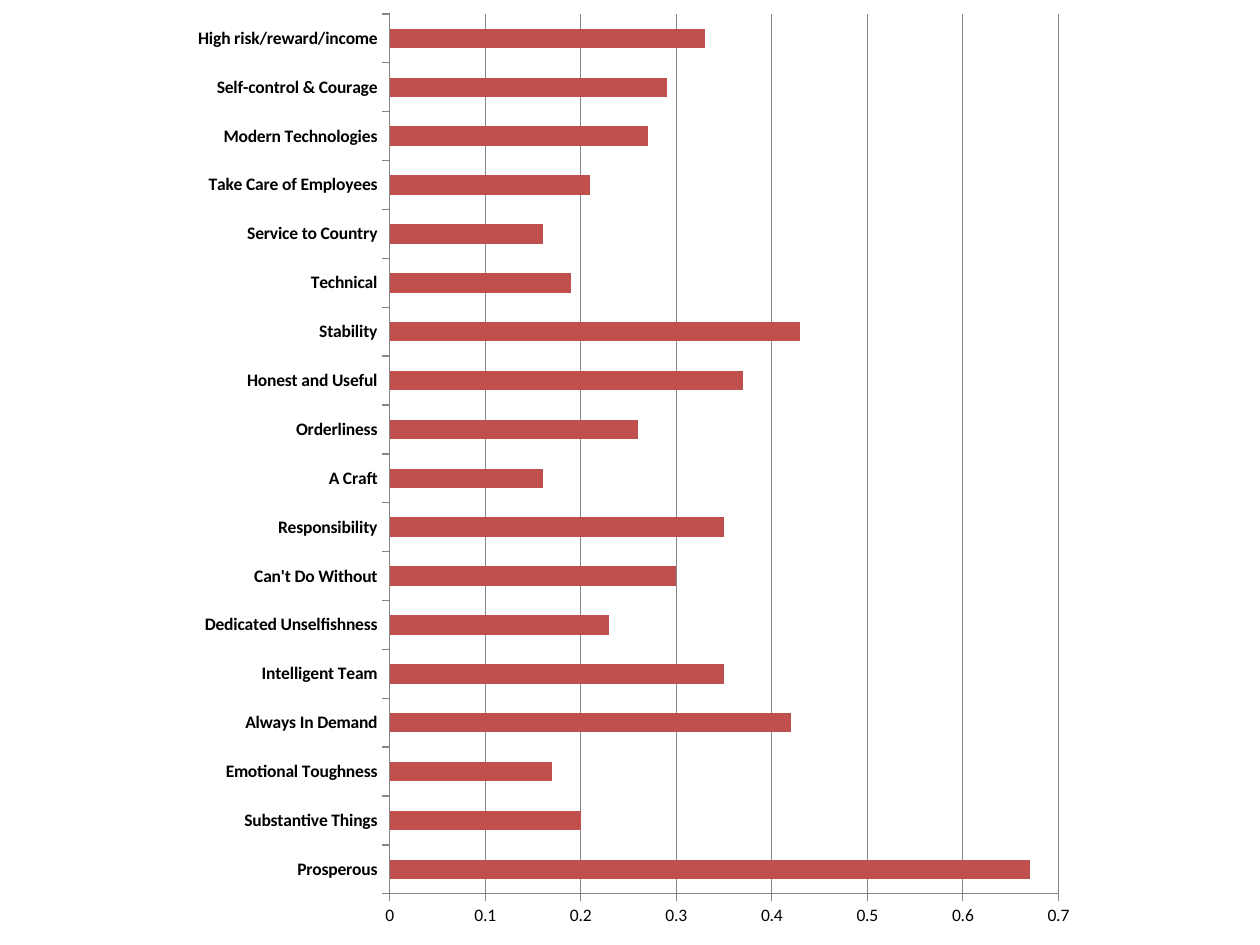
from dataclasses import dataclass

from pptx import Presentation
from pptx.chart.data import CategoryChartData
from pptx.dml.color import RGBColor
from pptx.enum.chart import XL_CHART_TYPE, XL_TICK_MARK
from pptx.util import Cm, Pt

BAR = XL_CHART_TYPE.BAR_CLUSTERED
TICK_OUT, TICK_NONE = XL_TICK_MARK.OUTSIDE, XL_TICK_MARK.NONE


@dataclass(frozen=True)
class Theme:
    font: str = "Calibri"
    size: Pt = Pt(10)
    text: RGBColor = RGBColor(0x00, 0x00, 0x00)
    bar: RGBColor = RGBColor(0xC0, 0x50, 0x4D)
    rule: RGBColor = RGBColor(0x86, 0x86, 0x86)
    rule_width: Pt = Pt(0.75)


THEME = Theme()

# Listed from the bottom bar to the top one
SCORES = {
    "Prosperous": 0.67,
    "Substantive Things": 0.20,
    "Emotional Toughness": 0.17,
    "Always In Demand": 0.42,
    "Intelligent Team": 0.35,
    "Dedicated Unselfishness": 0.23,
    "Can't Do Without": 0.30,
    "Responsibility": 0.35,
    "A Craft": 0.16,
    "Orderliness": 0.26,
    "Honest and Useful": 0.37,
    "Stability": 0.43,
    "Technical": 0.19,
    "Service to Country": 0.16,
    "Take Care of Employees": 0.21,
    "Modern Technologies": 0.27,
    "Self-control & Courage": 0.29,
    "High risk/reward/income": 0.33,
}


def style_rule(line):
    line.color.rgb = THEME.rule
    line.width = THEME.rule_width


def style_font(font, bold=False):
    font.name = THEME.font
    font.size = THEME.size
    font.bold = bold
    font.color.rgb = THEME.text


def style_axis(axis, bold=False):
    axis.major_tick_mark = TICK_OUT
    axis.minor_tick_mark = TICK_NONE
    style_rule(axis.format.line)
    style_font(axis.tick_labels.font, bold)


def add_score_chart(slide, left, top, width, height):
    data = CategoryChartData(number_format="General")
    data.categories = list(SCORES)
    data.add_series("Series 1", list(SCORES.values()))
    chart = slide.shapes.add_chart(BAR, left, top, width, height, data).chart
    chart.has_legend = False
    chart.has_title = False
    style_font(chart.font)

    # Bars
    plot = chart.plots[0]
    plot.gap_width = 150
    plot.vary_by_categories = False
    fill = plot.series[0].format.fill
    fill.solid()
    fill.fore_color.rgb = THEME.bar

    # Axes and gridlines
    style_axis(chart.category_axis, bold=True)
    chart.category_axis.has_major_gridlines = False
    scale = chart.value_axis
    style_axis(scale)
    scale.minimum_scale, scale.maximum_scale, scale.major_unit = 0, 0.7, 0.1
    scale.has_major_gridlines = True
    style_rule(scale.major_gridlines.format.line)


def main():
    deck = Presentation()
    deck.slide_width, deck.slide_height = Cm(25.4), Cm(19.05)
    slide = deck.slides.add_slide(deck.slide_layouts[6])
    add_score_chart(slide, Cm(3.63), Cm(-0.1), Cm(18.29), Cm(19.15))
    deck.save("out.pptx")


if __name__ == "__main__":
    main()
